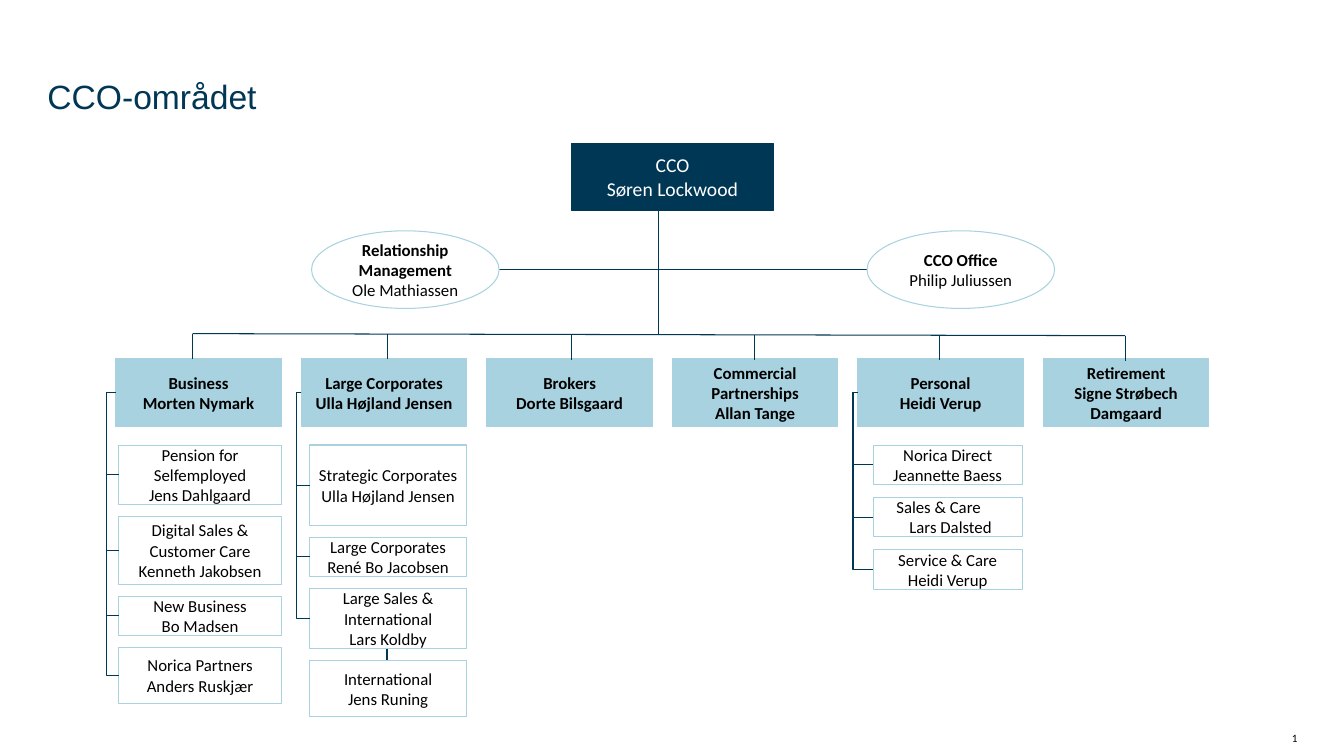
from pptx import Presentation, util as u
from pptx.dml import color
from pptx.enum import shapes, text
from pptx.oxml import ns
from lxml import etree

COLORS = {"navy": "003755", "sky": "A8D2E0", "black": "000000", "white": "FFFFFF"}
WIDTH, HEIGHT = 13.33, 7.5
PITCH, HEAD_WIDTH, HEAD_HEIGHT = 1.84, 1.64, 0.67
RAIL_START, RAIL_END = (1.91, 3.31), (11.16, 3.33)

DEPARTMENTS = [
    {"head": "Business\nMorten Nymark", "drop": 1.91,
     "team": {"left": 0.03, "width": 1.61, "rail": -0.09, "gap": 0.115, "units": [
         ("Pension for Selfemployed\nJens Dahlgaard", 0.59),
         ("Digital Sales & Customer Care\nKenneth Jakobsen", 0.68),
         ("New Business\nBo Madsen", 0.39),
         ("Norica Partners\nAnders Ruskjær", 0.56)]}},
    {"head": "Large Corporates\nUlla Højland Jensen", "drop": 3.84,
     "team": {"left": 0.08, "width": 1.56, "rail": -0.05, "gap": 0.115, "units": [
         ("Strategic Corporates\nUlla Højland Jensen", 0.8),
         ("Large Corporates\nRené Bo Jacobsen", 0.39),
         ("Large Sales & International\nLars Koldby", 0.6)],
         "below": ("International\nJens Runing", 0.56)}},
    {"head": "Brokers\nDorte Bilsgaard", "drop": 5.67},
    {"head": "Commercial Partnerships\nAllan Tange", "drop": 7.48},
    {"head": "Personal\nHeidi Verup", "drop": 9.32,
     "team": {"left": 0.15, "width": 1.48, "rail": -0.05, "gap": 0.13, "units": [
         ("Norica Direct\nJeannette Baess", 0.39),
         ("Sales & Care\nLars Dalsted", 0.39),
         ("Service & Care Heidi Verup", 0.39)],
         "indents": {1: (0.15, 0.28)}}},
    {"head": "Retirement\nSigne Strøbech\nDamgaard", "drop": 11.16},
]


def rgb(name):
    """Return the named colour."""
    return color.RGBColor.from_string(COLORS[name])


def write(frame, content, size=12, ink="black", font="Calibri", bold_lines=0, align="CENTER",
          anchor="MIDDLE", inset=0.08, spacing=None, indents=None):
    """Fill a text frame, one paragraph for each line of content."""
    frame.word_wrap = True
    frame.auto_size = text.MSO_AUTO_SIZE.NONE
    frame.vertical_anchor = getattr(text.MSO_ANCHOR, anchor)
    frame.margin_left = frame.margin_right = u.Inches(inset)
    frame.margin_top = frame.margin_bottom = u.Inches(inset)
    for index, line in enumerate(content.split("\n")):
        paragraph = frame.paragraphs[0] if index == 0 else frame.add_paragraph()
        paragraph.alignment = getattr(text.PP_ALIGN, align)
        if spacing:
            paragraph.line_spacing = spacing
        if indents:
            paragraph._p.get_or_add_pPr().set("marL", str(u.Inches(indents[index])))
        run = paragraph.add_run()
        run.text = line
        run.font.name = font
        run.font.size = u.Pt(size)
        run.font.bold = index < bold_lines
        run.font.color.rgb = rgb(ink)


def add_box(slide, box, content, fill=None, line="sky", kind="RECTANGLE", **style):
    """Draw one unit of the organisation."""
    shape = slide.shapes.add_shape(getattr(shapes.MSO_SHAPE, kind), *map(u.Inches, box))
    shape.shadow.inherit = False
    if fill:
        shape.fill.solid()
        shape.fill.fore_color.rgb = rgb(fill)
    else:
        shape.fill.background()
    shape.line.color.rgb = rgb(line)
    shape.line.width = u.Pt(0.75)
    write(shape.text_frame, content, **style)


def add_line(slide, start, end, width=0.75, bend=None):
    """Draw a straight line, or an elbow whose upright stands at bend."""
    kind = shapes.MSO_CONNECTOR.STRAIGHT if bend is None else shapes.MSO_CONNECTOR.ELBOW
    connector = slide.shapes.add_connector(kind, *map(u.Inches, start + end))
    connector.line.color.rgb = rgb("navy")
    connector.line.width = u.Pt(width)
    properties = connector._element.spPr
    etree.SubElement(properties, ns.qn("a:effectLst"))
    if bend is not None:
        share = round((bend - start[0]) / (end[0] - start[0]) * 100000)
        values = properties.find(ns.qn("a:prstGeom")).get_or_add_avLst()
        etree.SubElement(values, ns.qn("a:gd"), name="adj1", fmla=f"val {share}")


def add_title(slide, box):
    """Place the slide title."""
    title = slide.shapes.title
    title.left, title.top, title.width, title.height = map(u.Inches, box)
    write(title.text_frame, "CCO-området", size=24, ink="navy", font="Arial",
          align="LEFT", anchor="TOP", inset=0, spacing=0.9)


def add_page_number(slide, box):
    """Place the slide number field."""
    frame = slide.shapes.add_textbox(*map(u.Inches, box)).text_frame
    write(frame, "1", size=8, align="RIGHT", anchor="BOTTOM", inset=0)
    field = frame.paragraphs[0].runs[0]._r
    field.tag = ns.qn("a:fld")
    field.set("id", "{B6F15528-21DE-4FAA-801E-634DDDAF4B2B}")
    field.set("type", "slidenum")


def add_management(slide, box):
    """Draw the head of the area and its two staff offices."""
    left, top, width, height = box
    oval_width, oval_height, oval_top = 1.86, 0.77, top + 0.87
    right = left + width - oval_width
    middle = oval_top + oval_height / 2
    add_line(slide, (6.53, top + HEAD_HEIGHT), (6.53, top + height))
    add_line(slide, (left + oval_width, middle), (right, middle))
    add_box(slide, (5.67, top, 2, HEAD_HEIGHT), "CCO\nSøren Lockwood",
            fill="navy", line="navy", size=14, ink="white")
    offices = [(left, "Relationship Management\nOle Mathiassen"),
               (right, "CCO Office\nPhilip Juliussen")]
    for office_left, content in offices:
        add_box(slide, (office_left, oval_top, oval_width, oval_height), content,
                kind="OVAL", bold_lines=1, inset=0)


def add_team(slide, left, top, team):
    """Stack the units of a department and tie them to its heading."""
    unit_left, unit_top = left + team["left"], top + 0.855
    start = (left, top + HEAD_HEIGHT / 2)
    for index, (content, height) in enumerate(team["units"]):
        indents = team.get("indents", {}).get(index)
        add_box(slide, (unit_left, unit_top, team["width"], height), content,
                indents=indents, align="LEFT" if indents else "CENTER")
        add_line(slide, start, (unit_left, unit_top + height / 2), bend=left + team["rail"])
        unit_top += height + team["gap"]
    if "below" in team:
        content, height = team["below"]
        add_box(slide, (unit_left, unit_top, team["width"], height), content)
        add_line(slide, (3.84, unit_top - team["gap"]), (3.84, unit_top), width=1.5)


def add_departments(slide, left, top):
    """Draw the rail and the row of departments with their teams."""
    add_line(slide, RAIL_START, RAIL_END)
    slope = (RAIL_END[1] - RAIL_START[1]) / (RAIL_END[0] - RAIL_START[0])
    for column, department in enumerate(DEPARTMENTS):
        head_left = left + column * PITCH
        add_box(slide, (head_left, top, HEAD_WIDTH, HEAD_HEIGHT), department["head"],
                fill="sky", bold_lines=3)
        drop = department["drop"]
        rail_top = RAIL_START[1] + (drop - RAIL_START[0]) * slope
        add_line(slide, (drop, rail_top), (drop, rail_top + 0.25))
        if "team" in department:
            add_team(slide, head_left, top, department["team"])


def main():
    """Build the organisation chart and save it."""
    presentation = Presentation()
    presentation.slide_width = u.Inches(WIDTH)
    presentation.slide_height = u.Inches(HEIGHT)
    slide = presentation.slides.add_slide(presentation.slide_layouts[5])
    add_title(slide, (0.47, 0.8, 12.39, 0.36))
    add_management(slide, (3.09, 1.42, 7.37, 1.89))
    add_departments(slide, 1.15, 3.56)
    add_page_number(slide, (12.09, 7.26, 0.78, 0.13))
    presentation.save("out.pptx")


if __name__ == "__main__":
    main()
